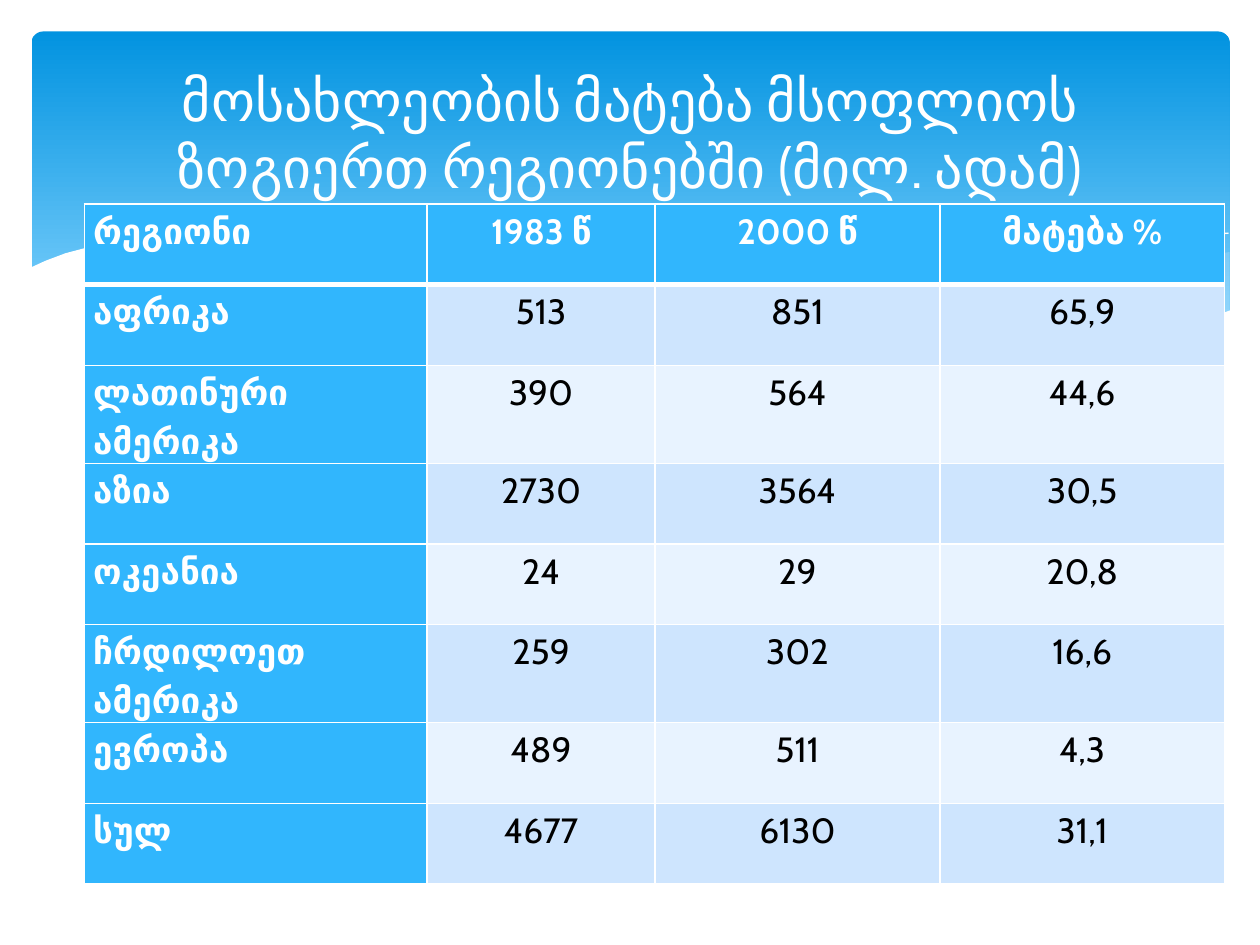
from lxml.etree import SubElement
from pptx import Presentation
from pptx.dml.color import RGBColor
from pptx.enum.shapes import MSO_SHAPE as Shape
from pptx.enum.text import MSO_ANCHOR as Anchor, PP_ALIGN as Align
from pptx.oxml.ns import qn
from pptx.util import Inches, Pt

FONT = "Cabin"
WHITE, BLACK, BLUE = "FFFFFF", "000000", "31B6FD"
BANDS = ["CEE5FE", "E8F3FF"]
TITLE = "მოსახლეობის მატება მსოფლიოს ზოგიერთ რეგიონებში (მილ. ადამ)"
ROWS = [
    ("რეგიონი", "1983 წ", "2000 წ", "მატება %"),
    ("აფრიკა", "513", "851", "65,9"),
    ("ლათინური ამერიკა", "390", "564", "44,6"),
    ("აზია", "2730", "3564", "30,5"),
    ("ოკეანია", "24", "29", "20,8"),
    ("ჩრდილოეთ ამერიკა", "259", "302", "16,6"),
    ("ევროპა", "489", "511", "4,3"),
    ("სულ", "4677", "6130", "31,1"),
]
COLUMN_WIDTHS = [2.72, 1.81, 2.26, 2.26]
ROW_HEIGHT = 0.64

RIGHT_WAVE = [
    (9.76, 2), (9.48, 2.04), (9.21, 2.1), (8.91, 2.16), (8.61, 2.23), (8.05, 2.37),
    (7.53, 2.48), (7.06, 2.57), (6.61, 2.65), (6.91, 2.69), (7.19, 2.72), (7.45, 2.75),
    (7.69, 2.77), (8.03, 2.78), (8.35, 2.77), (8.63, 2.75), (8.89, 2.72), (9.13, 2.67),
    (9.35, 2.62), (9.49, 2.57), (9.76, 2.47),
]
LEFT_WAVE = [
    (8.93, 2.73), (8.66, 2.69), (8.07, 2.6), (7.41, 2.47), (6.68, 2.31), (6.29, 2.22),
    (5.98, 2.14), (5.69, 2.08), (5.41, 2.03), (5.14, 1.98), (4.89, 1.94), (4.42, 1.89),
    (3.99, 1.86), (3.61, 1.85), (3.28, 1.87), (2.86, 1.91), (3.23, 1.96), (3.62, 2.03),
    (4.04, 2.11), (4.49, 2.22), (4.91, 2.32), (5.66, 2.48), (6.34, 2.61), (6.8, 2.68),
    (7.22, 2.74), (7.61, 2.77), (7.96, 2.78), (8.38, 2.78), (8.67, 2.76),
]
LONG_CURVE = [
    (3.09, 1.95), (3.28, 1.92), (3.53, 1.89), (3.87, 1.87), (4.33, 1.87), (4.69, 1.89),
    (5.1, 1.92), (5.56, 1.97), (6.08, 2.04), (6.65, 2.13), (7.27, 2.26), (7.95, 2.41),
    (8.69, 2.61), (9.07, 2.72),
]
SHORT_CURVE = [
    (6.13, 2.57), (6.53, 2.46), (6.95, 2.35), (7.48, 2.23), (8.06, 2.1), (8.66, 1.99),
    (8.95, 1.94), (9.24, 1.9), (9.51, 1.87), (9.75, 1.85),
]
WHITE_WAVE = [
    (9.77, 2.46), (9.59, 2.53), (9.4, 2.59), (9.2, 2.65), (8.99, 2.69), (8.75, 2.73),
    (8.5, 2.75), (8.09, 2.77), (7.78, 2.76), (7.44, 2.74), (7.08, 2.7), (6.68, 2.65),
    (6.26, 2.58), (5.79, 2.5), (5.29, 2.39), (4.75, 2.27), (4.18, 2.13), (3.65, 2.02),
    (3.16, 1.94), (2.71, 1.88), (2.3, 1.85), (1.93, 1.84), (1.61, 1.84), (1.32, 1.86),
    (1.06, 1.89), (0.85, 1.93), (0.67, 1.97), (0.52, 2.01), (0.36, 2.07), (0.23, 2.13),
    (0.23, 3.29), (9.77, 3.29),
]
WAVES = [
    (RIGHT_WAVE, "C6E7FC", 29),
    (LEFT_WAVE, "C6E7FC", 40),
    (LONG_CURVE, None, 100),
    (SHORT_CURVE, None, 100),
    (WHITE_WAVE, WHITE, 100),
]


def color(value):
    return RGBColor.from_string(value)


def add_banner(slide):
    banner = slide.shapes.add_shape(
        Shape.ROUNDED_RECTANGLE, Inches(0.25), Inches(0.25), Inches(9.51), Inches(2.7))
    banner.adjustments[0] = 0.034
    banner.shadow.inherit = False
    banner.line.fill.background()
    banner.fill.gradient()
    banner.fill.gradient_angle = 270
    for stop, position, value in zip(banner.fill.gradient_stops, (0, 0.9), ("0293E0", "83D3FE")):
        stop.position = position
        stop.color.rgb = color(value)


def add_wave(slide, points, fill, opacity):
    corners = [(Inches(x), Inches(y)) for x, y in points]
    builder = slide.shapes.build_freeform(*corners[0])
    builder.add_line_segments(corners[1:], close=fill is not None)
    wave = builder.convert_to_shape()
    wave.shadow.inherit = False
    if fill is None:
        wave.fill.background()
        wave.line.color.rgb = color(WHITE)
        wave.line.width = Pt(0)
        return
    wave.line.fill.background()
    wave.fill.solid()
    wave.fill.fore_color.rgb = color(fill)
    if opacity < 100:
        tone = wave.fill._xPr.find(f"{qn('a:solidFill')}/{qn('a:srgbClr')}")
        SubElement(tone, qn("a:alpha"), val=str(opacity * 1000))


def add_text(paragraph, text, size, value, bold=False):
    run = paragraph.add_run()
    run.text = text
    run.font.name = FONT
    run.font.size = Pt(size)
    run.font.bold = bold
    run.font.color.rgb = color(value)


def set_borders(cell, widths):
    properties = cell._tc.get_or_add_tcPr()
    for side, width in zip(("lnL", "lnR", "lnT", "lnB"), widths):
        line = SubElement(properties, qn(f"a:{side}"), w=str(Pt(width)))
        SubElement(SubElement(line, qn("a:solidFill")), qn("a:srgbClr"), val=WHITE)


def add_table(slide):
    table = slide.shapes.add_table(
        len(ROWS), len(COLUMN_WIDTHS), Inches(0.67), Inches(1.62),
        Inches(sum(COLUMN_WIDTHS)), Inches(ROW_HEIGHT * len(ROWS))).table
    for column, width in zip(table.columns, COLUMN_WIDTHS):
        column.width = Inches(width)
    for r, values in enumerate(ROWS):
        table.rows[r].height = Inches(ROW_HEIGHT)
        for c, text in enumerate(values):
            heading = r == 0 or c == 0
            cell = table.cell(r, c)
            cell.margin_left = cell.margin_right = Inches(0.07)
            cell.margin_top = cell.margin_bottom = 0
            set_borders(cell, (1, 1, 3 if r == 1 else 1, 3 if r == 0 else 1))
            cell.fill.solid()
            cell.fill.fore_color.rgb = color(BLUE if heading else BANDS[(r - 1) % 2])
            paragraph = cell.text_frame.paragraphs[0]
            paragraph.alignment = Align.CENTER if c else Align.LEFT
            paragraph.line_spacing = 1.15
            add_text(paragraph, text, 20, WHITE if heading else BLACK, heading)


def add_title(slide):
    title = slide.shapes.add_textbox(Inches(0.5), Inches(0.37), Inches(9), Inches(1.37))
    title.text_frame.word_wrap = True
    title.text_frame.vertical_anchor = Anchor.MIDDLE
    paragraph = title.text_frame.paragraphs[0]
    paragraph.alignment = Align.CENTER
    add_text(paragraph, TITLE, 32, WHITE)


def main():
    presentation = Presentation()
    presentation.slide_width, presentation.slide_height = Inches(10), Inches(7.5)
    slide = presentation.slides.add_slide(presentation.slide_layouts[6])
    add_banner(slide)
    for wave in WAVES:
        add_wave(slide, *wave)
    add_table(slide)
    add_title(slide)
    presentation.save("out.pptx")


if __name__ == "__main__":
    main()
